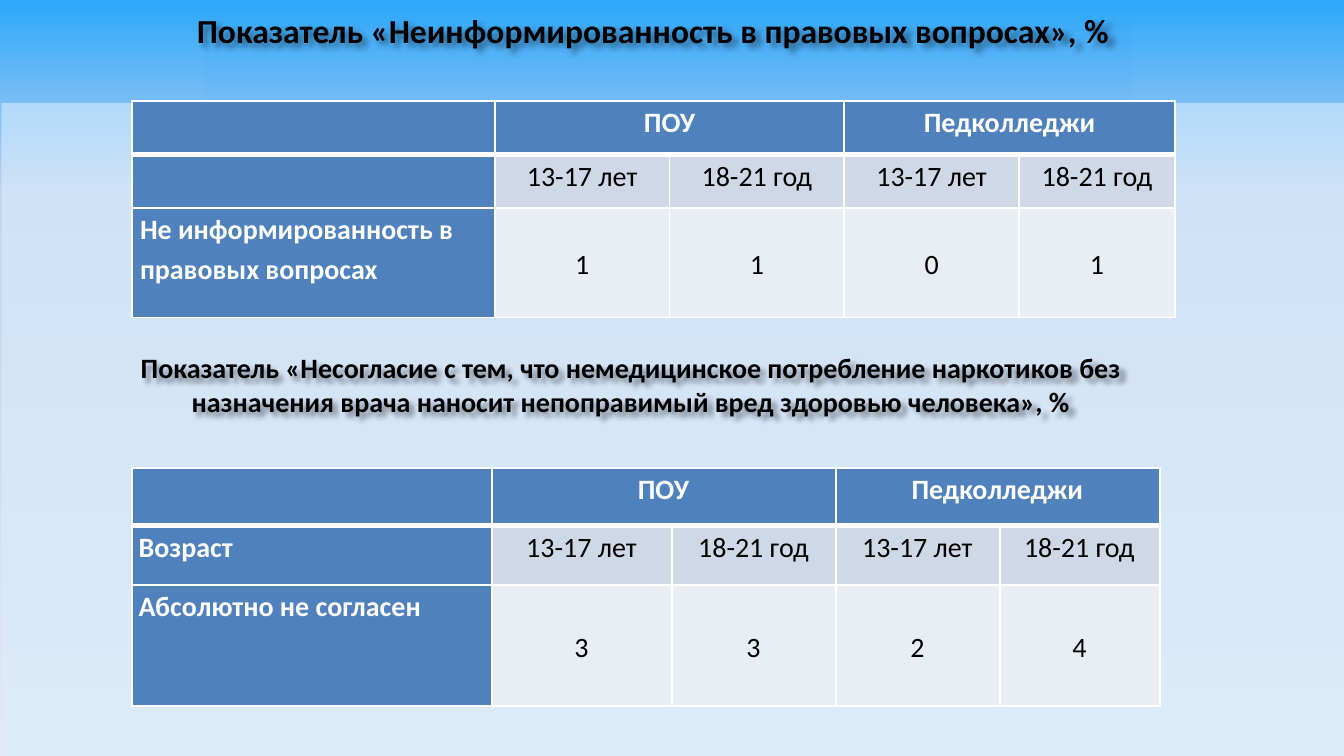
import copy

from lxml import etree
from pptx import Presentation
from pptx import util as u
from pptx.dml.color import RGBColor
from pptx.enum import shapes, text
from pptx.oxml import ns

WIDTH = u.Inches(10)
HEIGHT = WIDTH * 9 // 16
FONT = "Calibri"
COLORS = {
    "sky": "2CA8FC", "haze": "C2D1ED", "pale": "E1E8F5",
    "veil": "DAEFFE", "band": "299AF7",
    "head": "4F81BD", "ages": "D0D8E8", "values": "E9EDF4",
    "white": "FFFFFF", "black": "000000",
}


def rgb(name):
    return RGBColor.from_string(COLORS[name])


def sub(parent, tag, **attributes):
    return etree.SubElement(parent, ns.qn(tag), **attributes)


def share_box(left, top, width, height):
    """Turn shares of the slide, in percent, into lengths."""
    return (int(WIDTH * left / 100), int(HEIGHT * top / 100),
            int(WIDTH * width / 100), int(HEIGHT * height / 100))


def style_paragraph(paragraph, size, color, bold, align):
    paragraph.alignment = align
    for run in paragraph.runs:
        run.font.size = u.Pt(size)
        run.font.name = FONT
        run.font.bold = bold
        run.font.color.rgb = rgb(color)


def set_background(slide):
    fill = slide.background.fill
    fill.gradient()
    fill.gradient_angle = 270
    first_stop = slide.element.find(".//" + ns.qn("a:gs"))
    first_stop.addnext(copy.deepcopy(first_stop))
    stops = ((0, "sky"), (0.26, "haze"), (1, "pale"))
    for stop, (position, color) in zip(fill.gradient_stops, stops):
        stop.position = position
        stop.color.rgb = rgb(color)


def add_veil(slide, box, color, opacity):
    veil = slide.shapes.add_shape(shapes.MSO_SHAPE.RECTANGLE, *box)
    veil.shadow.inherit = False
    veil.line.fill.background()
    veil.fill.solid()
    veil.fill.fore_color.rgb = rgb(color)
    tint = veil.element.spPr.find(".//" + ns.qn("a:srgbClr"))
    sub(tint, "a:alpha", val=str(opacity * 1000))


def add_heading(slide, box, wording, size, anchor, insets):
    heading = slide.shapes.add_textbox(*box)
    frame = heading.text_frame
    frame.word_wrap = True
    frame.vertical_anchor = anchor
    frame.margin_left = frame.margin_right = u.Inches(0.07)
    frame.margin_top, frame.margin_bottom = map(u.Inches, insets)
    frame.text = wording
    style_paragraph(frame.paragraphs[0], size, "black", True, text.PP_ALIGN.CENTER)
    # Soft shadow behind the letters
    effects = sub(heading.element.spPr, "a:effectLst")
    shadow = sub(effects, "a:outerShdw", blurRad="38100", dist="38100",
                 dir="2700000", algn="tl")
    sub(sub(shadow, "a:srgbClr", val=COLORS["black"]), "a:alpha", val="43000")


def add_borders(cell, top, bottom):
    properties = cell._tc.get_or_add_tcPr()
    for side, points in zip("LRTB", (1, 1, top, bottom)):
        line = sub(properties, f"a:ln{side}", w=str(u.Pt(points)))
        sub(sub(line, "a:solidFill"), "a:srgbClr", val=COLORS["white"])


def add_indicator_table(slide, box, columns, rows, content, left_inset, label_aligns):
    width, height = box[2:]
    table = slide.shapes.add_table(len(rows), len(columns), *box).table
    for column, weight in zip(table.columns, columns):
        column.width = int(width * weight / sum(columns))
    for row, weight in zip(table.rows, rows):
        row.height = int(height * weight / sum(rows))

    # Cells: header row and label column are blue, the rest is banded
    for r, line in enumerate(content):
        for c, wording in enumerate(line):
            cell = table.cell(r, c)
            is_head = r == 0 or c == 0
            add_borders(cell, 3 if r == 1 else 1, 3 if r == 0 else 1)
            cell.fill.solid()
            cell.fill.fore_color.rgb = rgb("head" if is_head else ("ages", "values")[r - 1])
            cell.margin_left, cell.margin_right = u.Inches(left_inset), u.Inches(0.06)
            cell.margin_top = cell.margin_bottom = 0
            if not wording:
                continue
            if r == 2 and c > 0:
                cell.vertical_anchor = text.MSO_ANCHOR.MIDDLE
            cell.text_frame.text = wording
            paragraph = cell.text_frame.paragraphs[0]
            paragraph.line_spacing = 1.15
            align = label_aligns[r] if c == 0 else text.PP_ALIGN.CENTER
            style_paragraph(paragraph, 15, "white" if is_head else "black", is_head, align)

    # Each kind of college spans its two age groups
    for c in (1, 3):
        table.cell(0, c).merge(table.cell(0, c + 1))


def main():
    deck = Presentation()
    deck.slide_width, deck.slide_height = WIDTH, HEIGHT
    slide = deck.slides.add_slide(deck.slide_layouts[6])
    colleges = ["", "ПОУ", "", "Педколледжи", ""]
    ages = ["13-17 лет", "18-21 год"] * 2
    label_left, label_justified = text.PP_ALIGN.LEFT, text.PP_ALIGN.JUSTIFY

    # Backdrop
    set_background(slide)
    add_veil(slide, share_box(0.1, 13.65, 99.9, 86.35), "veil", 58)
    add_veil(slide, share_box(15.2, 0.7, 69, 12.8), "band", 5)

    # Legal awareness
    add_heading(slide, share_box(7.5, 2.5, 82.2, 8.2),
                "Показатель «Неинформированность в правовых вопросах», %",
                18, text.MSO_ANCHOR.MIDDLE, (0, 0.3))
    add_indicator_table(
        slide, share_box(9.82, 13.35, 77.6, 28.65),
        (2.7, 1.3, 1.3, 1.3, 1.16), (0.4, 0.4, 0.82),
        (colleges, [""] + ages,
         ["Не информированность в правовых вопросах", "1", "1", "0", "1"]),
        0.06, (label_left,) * 3)

    # Attitude to drug use
    add_heading(slide, share_box(7.6, 45.65, 78.7, 8.2),
                "Показатель «Несогласие с тем, что немедицинское потребление наркотиков без "
                "назначения врача наносит непоправимый вред здоровью человека», %",
                15, text.MSO_ANCHOR.TOP, (0.04, 0.04))
    add_indicator_table(
        slide, share_box(9.82, 61.87, 76.5, 31.5),
        (2.68, 1.34, 1.22, 1.22, 1.19), (0.43, 0.44, 0.9),
        (colleges, ["Возраст"] + ages,
         ["Абсолютно не согласен", "3", "3", "2", "4"]),
        0.05, (label_left, label_justified, label_left))

    deck.save("out.pptx")


if __name__ == "__main__":
    main()
